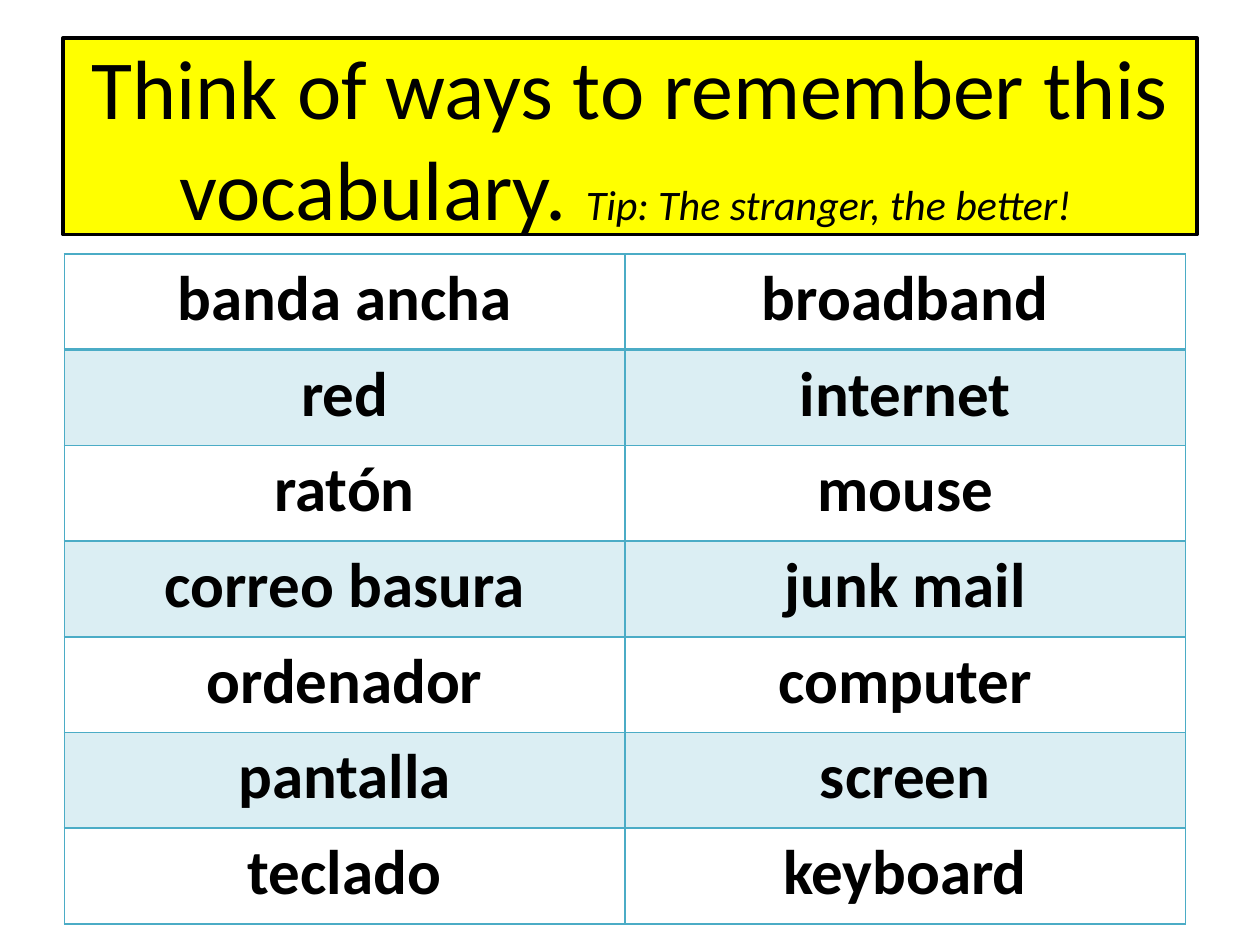
from lxml import etree
from pptx import Presentation
from pptx.dml.color import RGBColor
from pptx.enum import shapes, text
from pptx.oxml import ns
from pptx.util import Pt

BLACK = "000000"
YELLOW = "FFFF00"
TEAL = "4BACC6"
FONT = "Calibri"
VOCABULARY = [
    ("banda ancha", "broadband"),
    ("red", "internet"),
    ("ratón", "mouse"),
    ("correo basura", "junk mail"),
    ("ordenador", "computer"),
    ("pantalla", "screen"),
    ("teclado", "keyboard"),
]


def color(value):
    return RGBColor.from_string(value)


def format_run(run, size, bold=False, italic=False):
    run.font.name = FONT
    run.font.size = Pt(size)
    run.font.bold = bold
    run.font.italic = italic
    run.font.color.rgb = color(BLACK)


def fill_cell(cell, tinted):
    if not tinted:
        cell.fill.background()
        return
    cell.fill.solid()
    cell.fill.fore_color.rgb = color(TEAL)
    rgb = cell._tc.tcPr.find(".//" + ns.qn("a:srgbClr"))
    etree.SubElement(rgb, ns.qn("a:alpha"), val="20000")


def border_cell(cell, widths):
    properties = cell._tc.get_or_add_tcPr()
    for index, (side, width) in enumerate(zip("LRTB", widths)):
        line = etree.Element(ns.qn(f"a:ln{side}"), w=str(Pt(width)))
        fill = etree.SubElement(line, ns.qn("a:solidFill"))
        etree.SubElement(fill, ns.qn("a:srgbClr"), val=TEAL)
        properties.insert(index, line)


def add_heading(slide, left, top, width, height):
    shape = slide.shapes.add_shape(
        shapes.MSO_SHAPE.ROUNDED_RECTANGLE, Pt(left), Pt(top), Pt(width), Pt(height))
    shape.adjustments[0] = 0
    shape.shadow.inherit = False
    shape.fill.solid()
    shape.fill.fore_color.rgb = color(YELLOW)
    shape.line.color.rgb = color(BLACK)
    shape.line.width = Pt(2)
    frame = shape.text_frame
    frame.word_wrap = True
    frame.vertical_anchor = text.MSO_ANCHOR.MIDDLE
    frame.margin_top = frame.margin_bottom = Pt(0)
    paragraph = frame.paragraphs[0]
    paragraph.alignment = text.PP_ALIGN.CENTER
    for words, size, italic in [
        ("Think of ways to remember this vocabulary. ", 48, False),
        ("Tip: The stranger, the better! ", 24, True),
    ]:
        run = paragraph.add_run()
        run.text = words
        format_run(run, size, italic=italic)


def add_vocabulary(slide, left, top, width, height):
    rows, columns = len(VOCABULARY), len(VOCABULARY[0])
    table = slide.shapes.add_table(
        rows, columns, Pt(left), Pt(top), Pt(width), Pt(height)).table
    table.first_row = False
    table.horz_banding = False
    for row, pair in enumerate(VOCABULARY):
        for column, word in enumerate(pair):
            cell = table.cell(row, column)
            cell.text = word
            paragraph = cell.text_frame.paragraphs[0]
            paragraph.alignment = text.PP_ALIGN.CENTER
            format_run(paragraph.runs[0], 36, bold=True)
            fill_cell(cell, tinted=row % 2 == 1)
            border_cell(cell, (1, 1, 2 if row == 1 else 1, 2 if row == 0 else 1))


def main():
    presentation = Presentation()
    presentation.slide_width = Pt(720)
    presentation.slide_height = Pt(540)
    slide = presentation.slides.add_slide(presentation.slide_layouts[6])
    add_heading(slide, 36, 21.6, 648, 112.4)
    add_vocabulary(slide, 36.8, 145.2, 640.6, 382.9)
    presentation.save("out.pptx")


if __name__ == "__main__":
    main()
